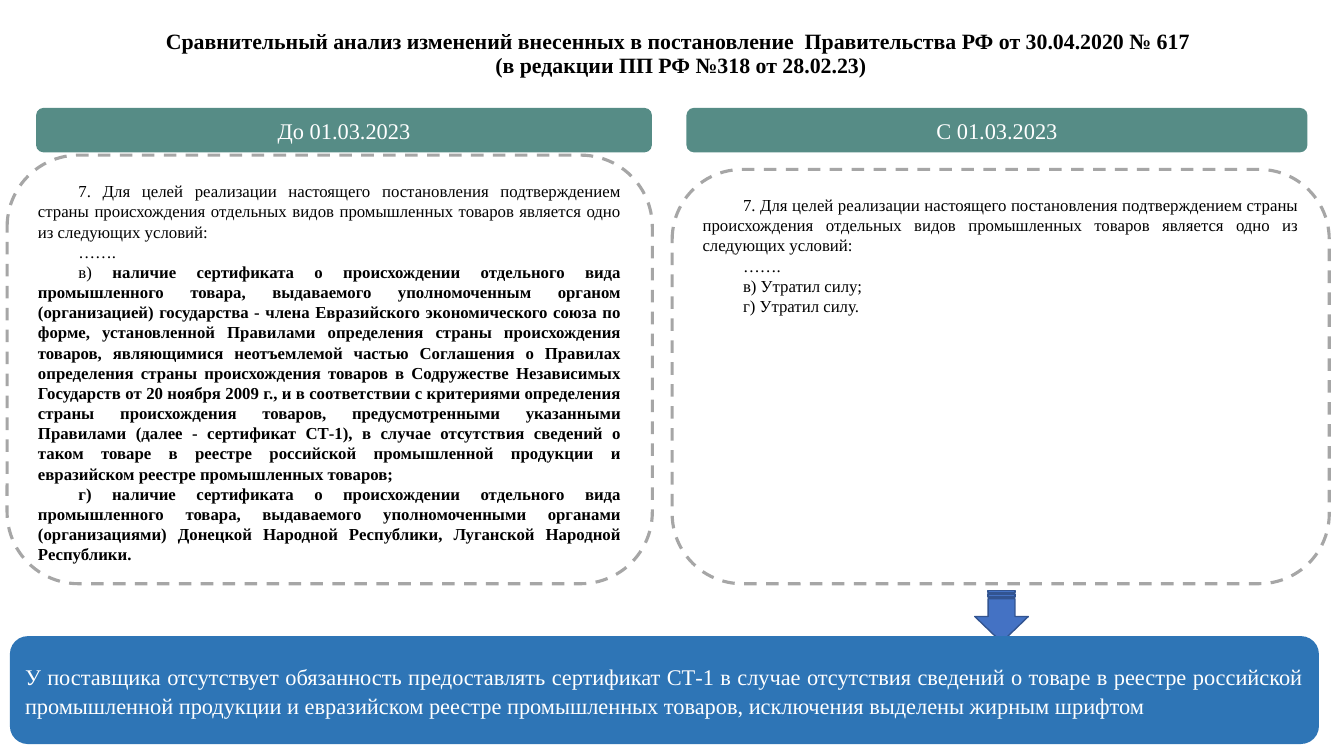
import pptx
import pptx.dml.color
import pptx.enum.dml
import pptx.enum.shapes
import pptx.enum.text
import pptx.util

Cm = pptx.util.Cm
Pt = pptx.util.Pt
Shapes = pptx.enum.shapes.MSO_SHAPE
Align = pptx.enum.text.PP_ALIGN
Anchor = pptx.enum.text.MSO_ANCHOR

COLORS = {
    "text": "000000", "light": "FFFFFF", "dash": "A6A6A6", "header": "568C86",
    "arrow": "4472C4", "arrow_line": "325491", "conclusion": "2E75B6",
}


def add_block(kind, left, top, width, height, fill=None, line=None, line_width=1):
    shape = slide.shapes.add_shape(kind, Cm(left), Cm(top), Cm(width), Cm(height))
    shape.shadow.inherit = False
    if fill:
        shape.fill.solid()
        shape.fill.fore_color.rgb = pptx.dml.color.RGBColor.from_string(COLORS[fill])
    else:
        shape.fill.background()
    if line:
        shape.line.color.rgb = pptx.dml.color.RGBColor.from_string(COLORS[line])
        shape.line.width = Pt(line_width)
    else:
        shape.line.fill.background()
    return shape


def write_text(shape, paragraphs, size, color, align, anchor, spacing=1.0, bold=None):
    """Each paragraph is a list of (text, bold) runs."""
    frame = shape.text_frame
    frame.word_wrap = True
    frame.auto_size = pptx.enum.text.MSO_AUTO_SIZE.NONE
    frame.vertical_anchor = anchor
    for index, runs in enumerate(paragraphs):
        paragraph = frame.add_paragraph() if index else frame.paragraphs[0]
        paragraph.alignment = align
        paragraph.line_spacing = spacing
        paragraph.space_before = Pt(0)
        paragraph.font.name = "Times New Roman"
        paragraph.font.size = Pt(size)
        paragraph.font.bold = bold
        paragraph.font.color.rgb = pptx.dml.color.RGBColor.from_string(COLORS[color])
        for text, run_bold in runs:
            run = paragraph.add_run()
            run.text = text
            if run_bold:
                run.font.bold = True


presentation = pptx.Presentation()
presentation.slide_width = Cm(33.87)
presentation.slide_height = Cm(19.05)
slide = presentation.slides.add_slide(presentation.slide_layouts[5])

# Title
title = slide.shapes.title
title.left, title.top, title.width, title.height = Cm(1.07), Cm(-0.1), Cm(32.18), Cm(2.77)
title.text_frame.margin_bottom = Cm(0.7)
write_text(title, [
    [("Сравнительный анализ изменений внесенных в постановление  Правительства РФ от 30.04.2020 № 617 ", False)],
    [("(в редакции ПП РФ №318 от 28.02.23)", False)],
], 15.6, "text", Align.CENTER, Anchor.BOTTOM, spacing=0.9, bold=True)

# Dashed panels with the wording of each edition
shared_clauses = [
    [("7. Для целей реализации настоящего постановления подтверждением страны происхождения "
      "отдельных видов промышленных товаров является одно из следующих условий:", False)],
    [("…….", False)],
]
old_clauses = [
    [("в) ", False),
     ("наличие сертификата о происхождении отдельного вида промышленного товара, выдаваемого "
      "уполномоченным органом (организацией) государства - члена Евразийского экономического союза "
      "по форме, установленной Правилами определения страны происхождения товаров, являющимися "
      "неотъемлемой частью Соглашения о Правилах определения страны происхождения товаров в "
      "Содружестве Независимых Государств от 20 ноября 2009 г., и в соответствии с критериями "
      "определения страны происхождения товаров, предусмотренными указанными Правилами (далее - "
      "сертификат СТ-1), в случае отсутствия сведений о таком товаре в реестре российской "
      "промышленной продукции и евразийском реестре промышленных товаров;", True)],
    [("г) наличие сертификата о происхождении отдельного вида промышленного товара, выдаваемого "
      "уполномоченными органами (организациями) Донецкой Народной Республики, Луганской Народной "
      "Республики.", True)],
]
new_clauses = [[("в) Утратил силу;", False)], [("г) Утратил силу.", False)]]

panels = [
    (0.18, 3.91, 16.26, 10.8, 0.167, old_clauses),
    (16.94, 4.27, 16.56, 10.44, 0.169, new_clauses),
]
for left, top, width, height, rounding, clauses in panels:
    panel = add_block(Shapes.ROUNDED_RECTANGLE, left, top, width, height,
                      line="dash", line_width=2.25)
    panel.line.dash_style = pptx.enum.dml.MSO_LINE.DASH
    panel.adjustments[0] = rounding
    write_text(panel, shared_clauses + clauses, 12, "text", Align.JUSTIFY, Anchor.TOP)
    for paragraph in panel.text_frame.paragraphs:
        properties = paragraph._p.get_or_add_pPr()
        properties.set("marL", "0")
        properties.set("indent", str(Cm(1.02)))

# Column headers
for left, width, label in [(0.91, 15.52, "До 01.03.2023"), (17.3, 15.65, "С 01.03.2023")]:
    header = add_block(Shapes.ROUNDED_RECTANGLE, left, 2.72, width, 1.12, fill="header")
    write_text(header, [[(label, False)]], 16, "light", Align.CENTER, Anchor.MIDDLE)

# Arrow down to the conclusion
arrow = add_block(Shapes.STRIPED_RIGHT_ARROW, 24.59, 14.86, 1.3, 1.35,
                  fill="arrow", line="arrow_line")
arrow.rotation = 90

# Conclusion
conclusion = add_block(Shapes.ROUNDED_RECTANGLE, 0.25, 16.03, 32.99, 2.72, fill="conclusion")
write_text(conclusion, [[
    ("У поставщика отсутствует обязанность предоставлять сертификат СТ-1 в случае отсутствия "
     "сведений о товаре в реестре российской промышленной продукции и евразийском реестре "
     "промышленных товаров, исключения выделены жирным шрифтом", False),
]], 16, "light", Align.JUSTIFY, Anchor.MIDDLE, spacing=1.07)

presentation.save("out.pptx")
